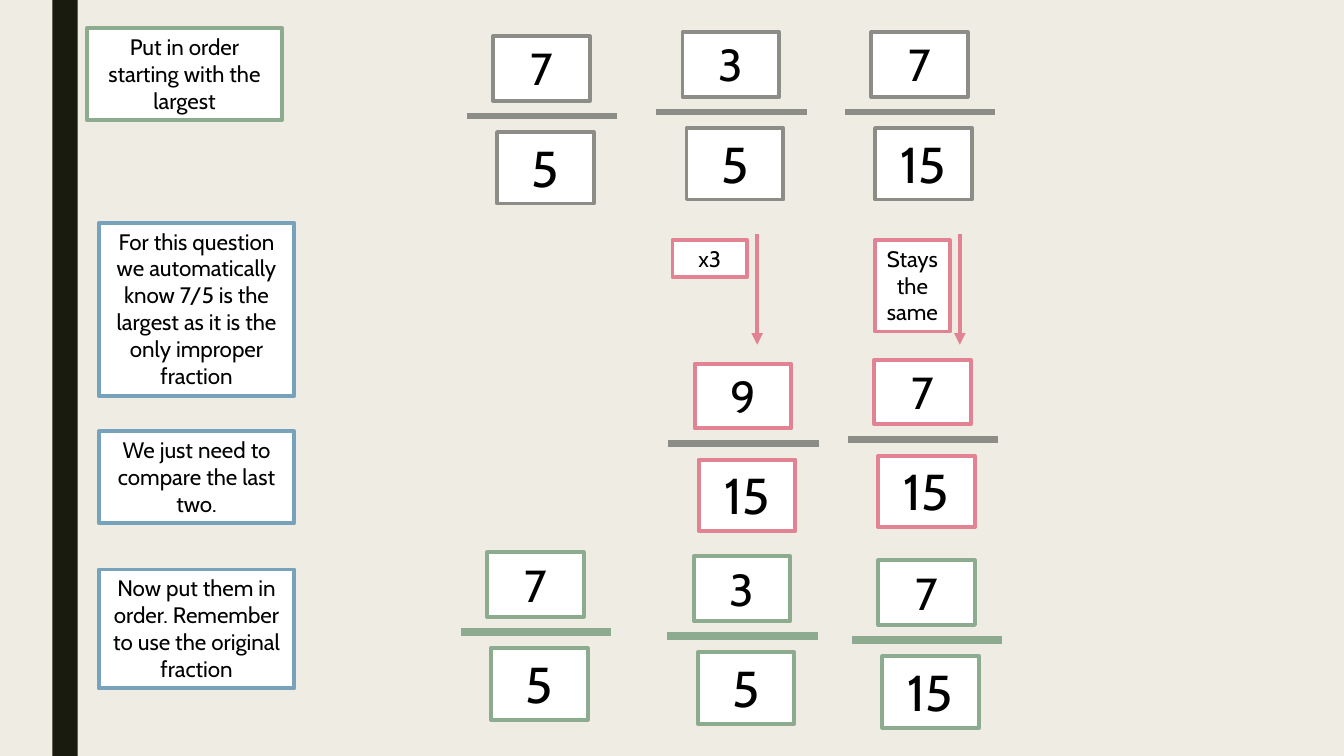
from dataclasses import dataclass

from lxml.etree import SubElement
from pptx import Presentation
from pptx.dml.color import RGBColor
from pptx.enum.shapes import MSO_CONNECTOR, MSO_SHAPE
from pptx.enum.text import MSO_ANCHOR, MSO_AUTO_SIZE, PP_ALIGN
from pptx.oxml.ns import qn
from pptx.util import Inches, Pt


@dataclass(frozen=True)
class Theme:
    font: str = "Cabin"
    background: str = "EFEDE3"
    stripe: str = "191B0E"
    text: str = "000000"
    box: str = "FFFFFF"
    grey: str = "8C8D86"
    green: str = "8DAB8E"
    blue: str = "77A2BB"
    pink: str = "E28394"
    note_size: int = 16
    numerator_size: int = 32
    denominator_size: int = 36
    outline: float = 2.75
    bar: float = 4.5
    answer_bar: float = 6


THEME = Theme()


def color(code):
    return RGBColor.from_string(code)


def format_box(shape, text, line_color, size):
    """White box of fixed size with a coloured outline and centred text."""
    shape.fill.solid()
    shape.fill.fore_color.rgb = color(THEME.box)
    shape.line.color.rgb = color(line_color)
    shape.line.width = Pt(THEME.outline)
    frame = shape.text_frame
    frame.text = text
    frame.word_wrap = True
    frame.auto_size = MSO_AUTO_SIZE.NONE
    frame.vertical_anchor = MSO_ANCHOR.TOP
    paragraph = frame.paragraphs[0]
    paragraph.alignment = PP_ALIGN.CENTER
    paragraph.font.name = THEME.font
    paragraph.font.size = Pt(size)
    paragraph.font.color.rgb = color(THEME.text)


def add_box(shapes, left, top, width, height, text, line_color, size=THEME.note_size):
    shape = shapes.add_shape(MSO_SHAPE.RECTANGLE, Inches(left), Inches(top),
                             Inches(width), Inches(height))
    shape.shadow.inherit = False
    format_box(shape, text, line_color, size)


def add_line(shapes, start, end, line_color, width, arrow=False):
    connector = shapes.add_connector(MSO_CONNECTOR.STRAIGHT,
                                     *(Inches(value) for value in (*start, *end)))
    connector.line.color.rgb = color(line_color)
    connector.line.width = Pt(width)
    properties = connector.element.spPr
    if arrow:
        SubElement(properties.find(qn("a:ln")), qn("a:tailEnd"), type="triangle")
    SubElement(properties, qn("a:effectLst"))


def add_fraction(slide, left, top, numerator, denominator, box_color, bar_color, bar_width):
    """Numerator, bar and denominator, grouped at the given corner."""
    shapes = slide.shapes.add_group_shape().shapes
    add_box(shapes, left + 0.26, top, 0.96, 0.64, numerator, box_color,
            THEME.numerator_size)
    add_box(shapes, left + 0.3, top + 0.95, 0.96, 0.71, denominator, box_color,
            THEME.denominator_size)
    bar_top = top + 0.79
    add_line(shapes, (left, bar_top), (left + 1.49, bar_top), bar_color, bar_width)


def add_conversion(slide, left, top, height, text):
    """Label with a downward arrow at its right."""
    add_line(slide.shapes, (left + 0.84, top - 0.06), (left + 0.84, top + 1.04),
             THEME.pink, THEME.outline, arrow=True)
    add_box(slide.shapes, left, top, 0.74, height, text, THEME.pink)


def add_backdrop(slide, height):
    slide.background.fill.solid()
    slide.background.fill.fore_color.rgb = color(THEME.background)
    stripe = slide.shapes.add_shape(MSO_SHAPE.RECTANGLE, Inches(0.52), 0,
                                    Inches(0.25), height)
    stripe.shadow.inherit = False
    stripe.fill.solid()
    stripe.fill.fore_color.rgb = color(THEME.stripe)
    stripe.line.fill.background()


def add_instructions(slide, left, width):
    """Task title and the column of explanations under it."""
    title = slide.shapes.title
    title.left, title.top = Inches(left), Inches(0.28)
    title.width, title.height = Inches(width), Inches(0.91)
    format_box(title, "Put in order starting with the largest", THEME.green,
               THEME.note_size)
    notes = [
        (2.21, 1.72, "For this question we automatically know 7/5 is the largest "
                     "as it is the only improper fraction"),
        (4.28, 0.91, "We just need to compare the last two."),
        (5.65, 1.18, "Now put them in order. Remember to use the original fraction"),
    ]
    for top, height, text in notes:
        add_box(slide.shapes, left + 0.12, top, width, height, text, THEME.blue)


def add_fractions(slide):
    """Question row, common-denominator row and answer row."""
    question = (THEME.grey, THEME.grey, THEME.bar)
    converted = (THEME.pink, THEME.grey, THEME.bar)
    answer = (THEME.green, THEME.green, THEME.answer_bar)
    rows = [
        (question, [(4.63, 0.36, "7", "5"), (6.51, 0.32, "3", "5"),
                    (8.38, 0.32, "7", "15")]),
        (converted, [(6.63, 3.61, "9", "15"), (8.41, 3.57, "7", "15")]),
        (answer, [(4.57, 5.48, "7", "5"), (6.62, 5.52, "3", "5"),
                  (8.45, 5.56, "7", "15")]),
    ]
    for style, fractions in rows:
        for fraction in fractions:
            add_fraction(slide, *fraction, *style)


def main():
    presentation = Presentation()
    presentation.slide_width = Inches(13.33)
    presentation.slide_height = Inches(7.5)
    title_only = presentation.slide_layouts[5]
    slide = presentation.slides.add_slide(title_only)

    add_backdrop(slide, presentation.slide_height)
    add_instructions(slide, left=0.86, width=1.94)
    add_fractions(slide)
    add_conversion(slide, 6.67, 2.38, 0.37, "x3")
    add_conversion(slide, 8.68, 2.38, 0.91, "Stays the same")

    presentation.save("out.pptx")


if __name__ == "__main__":
    main()
